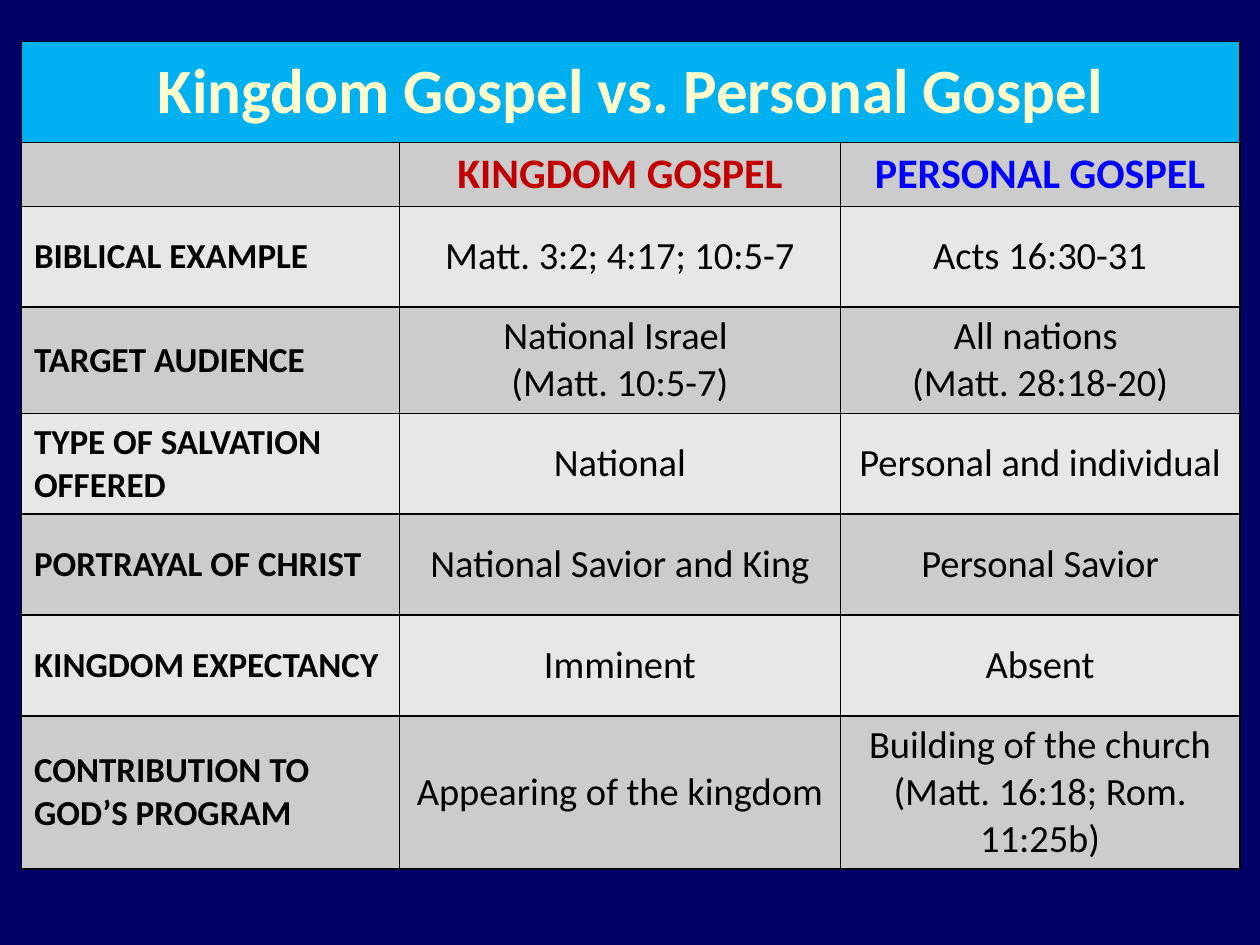
from lxml.etree import SubElement
from pptx import Presentation
from pptx.dml.color import RGBColor
from pptx.enum.text import MSO_ANCHOR, PP_ALIGN
from pptx.oxml.ns import qn
from pptx.util import Inches, Pt

NAVY = RGBColor(0x00, 0x00, 0x66)
SKY = RGBColor(0x00, 0xB0, 0xF0)
CREAM = RGBColor(0xFF, 0xFF, 0xCC)
RED = RGBColor(0xC0, 0x00, 0x00)
BLUE = RGBColor(0x00, 0x00, 0xFF)
BLACK = RGBColor(0x00, 0x00, 0x00)
BANDS = (RGBColor(0xCC, 0xCC, 0xCC), RGBColor(0xE7, 0xE7, 0xE7))

TITLE = {"size": Pt(36), "bold": True, "color": CREAM}
KINGDOM_HEAD = {"size": Pt(24), "bold": True, "color": RED}
PERSONAL_HEAD = {**KINGDOM_HEAD, "color": BLUE}
LABEL = {"size": Pt(20), "bold": True, "color": BLACK}
ANSWER = {"size": Pt(22), "bold": False, "color": BLACK}

COLUMN_WIDTHS = (3, 3.5, 3.17)
ROW_HEIGHTS = (0.8, 0.5) + (0.8,) * 6
COMPARISON = (
    ("", "KINGDOM GOSPEL", "PERSONAL GOSPEL"),
    ("BIBLICAL EXAMPLE", "Matt. 3:2; 4:17; 10:5-7", "Acts 16:30-31"),
    ("TARGET AUDIENCE", "National Israel \n(Matt. 10:5-7)",
     "All nations \n(Matt. 28:18-20)"),
    ("TYPE OF SALVATION OFFERED", "National", "Personal and individual"),
    ("PORTRAYAL OF CHRIST", "National Savior and King", "Personal Savior"),
    ("KINGDOM EXPECTANCY", "Imminent", "Absent"),
    ("CONTRIBUTION TO GOD’S PROGRAM", "Appearing of the kingdom",
     "Building of the church (Matt. 16:18; Rom. 11:25b)"),
)


class SlideBuilder:
    def __init__(self, deck, font_name):
        self.font_name = font_name
        self.page = deck.slides.add_slide(deck.slide_layouts[6])

    def background(self, color):
        fill = self.page.background.fill
        fill.solid()
        fill.fore_color.rgb = color

    def table(self, left, top, widths, heights):
        frame = self.page.shapes.add_table(
            len(heights), len(widths), Inches(left), Inches(top),
            Inches(sum(widths)), Inches(sum(heights)))
        for column, width in zip(frame.table.columns, widths):
            column.width = Inches(width)
        for row, height in zip(frame.table.rows, heights):
            row.height = Inches(height)
        return frame.table

    def cell(self, cell, text, text_format, fill, align=PP_ALIGN.CENTER):
        cell.vertical_anchor = MSO_ANCHOR.MIDDLE
        self.borders(cell)
        cell.fill.solid()
        cell.fill.fore_color.rgb = fill
        if not text:
            return
        cell.text = text
        for para in cell.text_frame.paragraphs:
            para.alignment = align
            for span in para.runs:
                self.style(span.font, text_format)

    def style(self, font, text_format):
        font.name = self.font_name
        for name, value in text_format.items():
            if name == "color":
                font.color.rgb = value
            else:
                setattr(font, name, value)

    def borders(self, cell):
        """Draw thin black lines on all sides; call before filling the cell."""
        properties = cell._tc.get_or_add_tcPr()
        for side in ("lnL", "lnR", "lnT", "lnB"):
            line = SubElement(properties, qn(f"a:{side}"), w=str(Pt(1)))
            solid = SubElement(line, qn("a:solidFill"))
            SubElement(solid, qn("a:srgbClr"), val=str(BLACK))


def main():
    deck = Presentation()
    deck.slide_width, deck.slide_height = Inches(10), Inches(7.5)
    builder = SlideBuilder(deck, "Calibri")
    builder.background(NAVY)

    table = builder.table(0.17, 0.33, COLUMN_WIDTHS, ROW_HEIGHTS)
    table.cell(0, 0).merge(table.cell(0, 2))
    builder.cell(table.cell(0, 0), "Kingdom Gospel vs. Personal Gospel", TITLE, SKY)
    for column in (1, 2):
        builder.borders(table.cell(0, column))

    for index, texts in enumerate(COMPARISON):
        formats = (LABEL, ANSWER, ANSWER) if index else (LABEL, KINGDOM_HEAD, PERSONAL_HEAD)
        for column, (text, text_format) in enumerate(zip(texts, formats)):
            align = PP_ALIGN.CENTER if column else PP_ALIGN.LEFT
            builder.cell(table.cell(index + 1, column), text, text_format,
                         BANDS[index % 2], align)

    deck.save("out.pptx")


if __name__ == "__main__":
    main()
